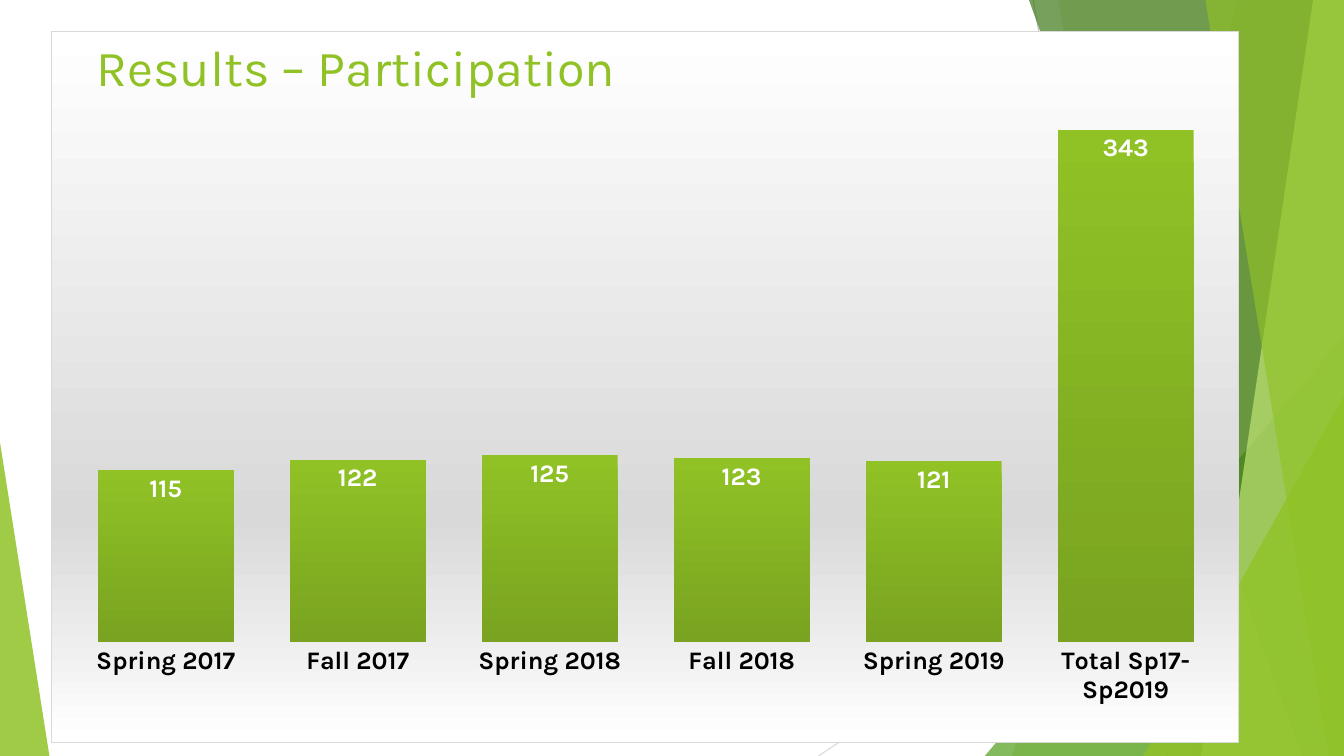
import pptx
import pptx.chart.data
import pptx.dml.color
import pptx.enum.chart
import pptx.enum.shapes
import pptx.enum.text
import pptx.oxml
import pptx.oxml.ns
import pptx.util

Pt = pptx.util.Pt
qn = pptx.oxml.ns.qn
NS = pptx.oxml.ns.nsdecls("a", "c")
W, H = 960, 540


def rgb(color):
    return pptx.dml.color.RGBColor.from_string(color)


def set_font(font, size, color, name, bold=False):
    font.size, font.name, font.bold = Pt(size), name, bold
    font.color.rgb = rgb(color)


def add_run(p, text, **fmt):
    r = p.add_run()
    r.text = text
    set_font(r.font, **fmt)


def gradient(stops):
    """Return a top-to-bottom gradient fill for (percent, color) stops."""
    gs = "".join(f'<a:gs pos="{pos * 1000}"><a:srgbClr val="{color}"/></a:gs>'
                 for pos, color in stops)
    return (f'<a:gradFill {NS}><a:gsLst>{gs}</a:gsLst>'
            '<a:lin ang="5400000" scaled="0"/></a:gradFill>')


class Deck:
    font = "Karla"
    green = "90C226"
    dark_green = "79A320"
    gray = "D9D9D9"

    def __init__(self):
        self.prs = pptx.Presentation()
        self.prs.slide_width, self.prs.slide_height = Pt(W), Pt(H)
        self.s = self.prs.slides.add_slide(self.prs.slide_layouts[6])

    def line(self, x1, y1, x2, y2, color):
        cx = self.s.shapes.add_connector(
            pptx.enum.shapes.MSO_CONNECTOR.STRAIGHT, Pt(x1), Pt(y1), Pt(x2), Pt(y2))
        cx.line.color.rgb = rgb(color)
        cx.line.width = Pt(0.75)
        cx._element.spPr.append(pptx.oxml.parse_xml(f"<a:effectLst {NS}/>"))

    def tint(self, sp, color, opacity):
        """Give a shape a see-through fill, no line and no shadow."""
        sp.shadow.inherit = False
        sp.line.fill.background()
        sp.fill.solid()
        sp.fill.fore_color.rgb = rgb(color)
        clr = sp._element.spPr.find(qn("a:solidFill"))[0]
        clr.append(pptx.oxml.parse_xml(f'<a:alpha {NS} val="{opacity * 1000}"/>'))

    def band(self, top_x, bottom_x, color, opacity):
        """Fill from a slanted left edge to the right side of the slide."""
        fb = self.s.shapes.build_freeform(top_x, 0, scale=float(Pt(1)))
        fb.add_line_segments([(W, 0), (W, H), (bottom_x, H)], close=True)
        self.tint(fb.convert_to_shape(), color, opacity)

    def triangle(self, x, y, w, apex, color, opacity):
        """Stand a triangle on the bottom edge of the slide."""
        sp = self.s.shapes.add_shape(
            pptx.enum.shapes.MSO_SHAPE.ISOSCELES_TRIANGLE, Pt(x), Pt(y), Pt(w), Pt(H - y))
        sp.adjustments[0] = apex
        self.tint(sp, color, opacity)

    def title(self, text, x, y, w, h):
        tf = self.s.shapes.add_textbox(Pt(x), Pt(y), Pt(w), Pt(h)).text_frame
        tf.word_wrap = True
        tf.vertical_anchor = pptx.enum.text.MSO_ANCHOR.TOP
        add_run(tf.paragraphs[0], text, size=36, color=self.green, name=self.font)

    def column_chart(self, values, x, y, w, h, layout):
        data = pptx.chart.data.CategoryChartData()
        data.categories = list(values)
        data.add_series("Series 1", list(values.values()))
        chart = self.s.shapes.add_chart(
            pptx.enum.chart.XL_CHART_TYPE.COLUMN_CLUSTERED,
            Pt(x), Pt(y), Pt(w), Pt(h), data).chart
        chart.has_title = chart.has_legend = False
        set_font(chart.font, 10, "000000", self.font)

        axis = chart.value_axis
        axis.minimum_scale, axis.maximum_scale = 0, 400
        axis.has_major_gridlines = False
        axis.visible = False
        axis = chart.category_axis
        axis.major_tick_mark = pptx.enum.chart.XL_TICK_MARK.NONE
        axis.format.line.fill.background()
        set_font(axis.tick_labels.font, 18, "000000", self.font, bold=True)

        plot = chart.plots[0]
        plot.gap_width = 41
        plot.vary_by_categories = False
        series = plot.series[0]
        series.invert_if_negative = False
        series._element.get_or_add_spPr().append(pptx.oxml.parse_xml(
            gradient([(0, self.green), (100, self.dark_green)])))
        labels = series.data_labels
        labels.show_value = True
        labels.position = pptx.enum.chart.XL_LABEL_POSITION.INSIDE_END
        set_font(labels.font, 18, "FFFFFF", self.font, bold=True)
        self.chart_area(chart)
        self.plot_layout(chart, *layout)

    def chart_area(self, chart):
        fill = gradient([(0, "FFFFFF"), (68, self.gray), (100, "FFFFFF")])
        chart._chartSpace.find(qn("c:chart")).addnext(pptx.oxml.parse_xml(
            f'<c:spPr {NS}>{fill}<a:ln w="{Pt(0.75)}"><a:solidFill>'
            f'<a:srgbClr val="{self.gray}"/></a:solidFill></a:ln></c:spPr>'))

    def plot_layout(self, chart, x, y, w, h):
        area = chart._chartSpace.find(qn("c:chart")).find(qn("c:plotArea"))
        for old in area.findall(qn("c:layout")):
            area.remove(old)
        sizes = "".join(f'<c:{k} val="{v}"/>' for k, v in zip("xywh", (x, y, w, h)))
        area.insert(0, pptx.oxml.parse_xml(
            f'<c:layout {NS}><c:manualLayout><c:layoutTarget val="inner"/>'
            f'<c:xMode val="edge"/><c:yMode val="edge"/>{sizes}'
            '</c:manualLayout></c:layout>'))


def main():
    deck = Deck()
    deck.line(738, 0, 833.8, H, "BFBFBF")
    deck.line(W, 290.2, 584.6, H, deck.gray)
    deck.band(884.2, 722.9, deck.green, 30)
    deck.band(756, 851.8, deck.green, 20)
    deck.triangle(703.4, 240, 256.6, 1, "54A021", 72)
    deck.band(735.1, 929.5, "3F7819", 70)
    deck.band(938.2, 858.2, "C0E474", 70)
    deck.band(861.1, 949, deck.green, 65)
    deck.triangle(816.6, 283, 143.4, 1, deck.green, 80)
    deck.triangle(0, 316, 35.3, 0, deck.green, 85)

    participation = {
        "Spring 2017": 115, "Fall 2017": 122, "Spring 2018": 125,
        "Fall 2018": 123, "Spring 2019": 121, "Total Sp17-Sp2019": 343,
    }
    deck.column_chart(participation, 36.7, 22.3, 848.2, 508.3,
                      layout=(0.015, 0.018, 0.971, 0.841))
    deck.title("Results – Participation", 62, 22.3, 676.8, 70.6)
    deck.prs.save("out.pptx")


if __name__ == "__main__":
    main()
